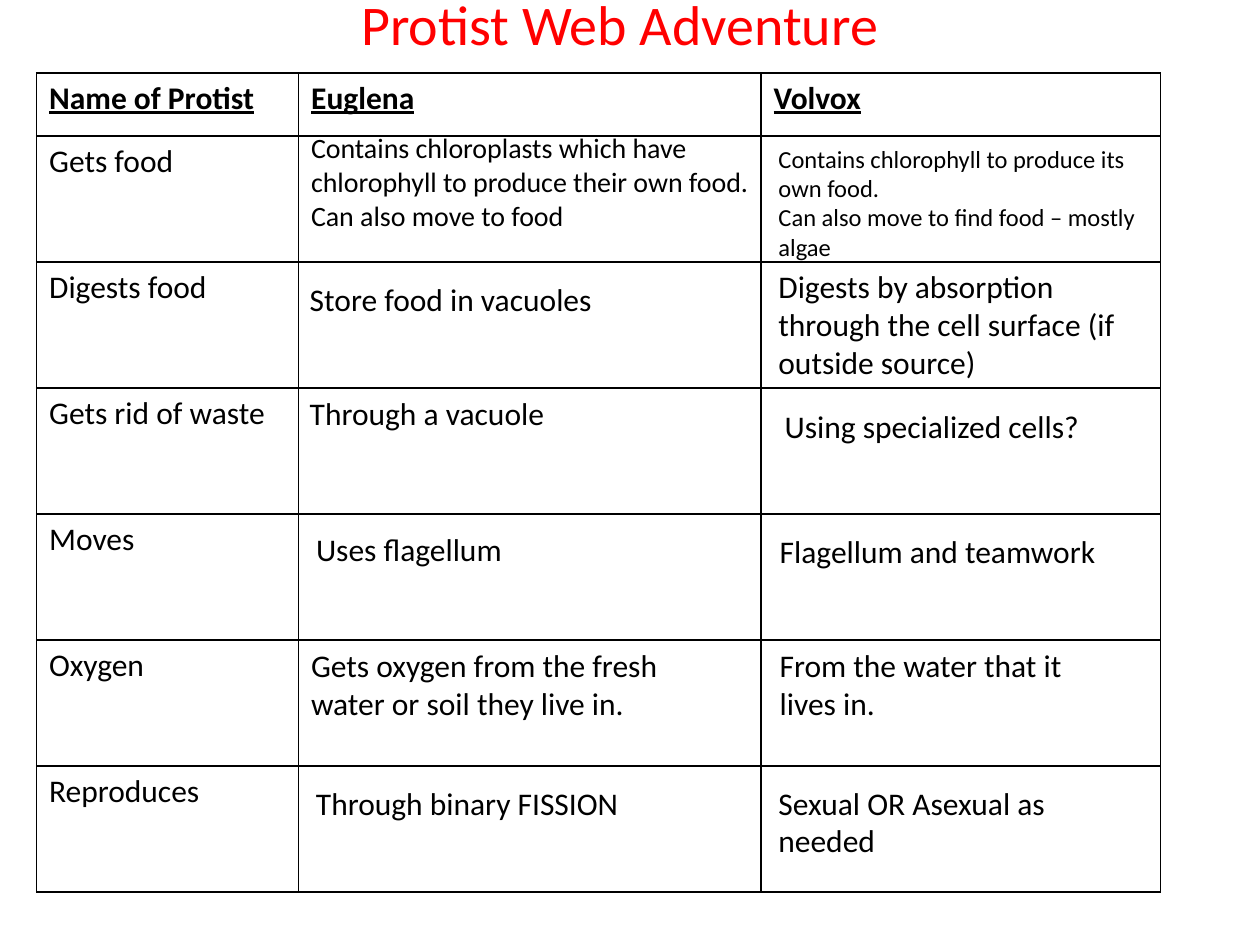
from lxml.etree import SubElement
from pptx import Presentation
from pptx.dml.color import RGBColor
from pptx.enum.text import MSO_ANCHOR, MSO_AUTO_SIZE, PP_ALIGN
from pptx.oxml.ns import qn
from pptx.util import Inches, Pt

COLORS = {"title": "FF0000", "text": "000000", "line": "000000", "cell": "FFFFFF"}
FONT = "Calibri"
TITLE = "Protist Web Adventure"
HEADERS = ["Name of Protist", "Euglena", "Volvox"]
TRAITS = ["Gets food", "Digests food", "Gets rid of waste", "Moves", "Oxygen", "Reproduces"]
COL_WIDTHS = [2.08, 3.67, 3.17]
ROW_HEIGHTS = [0.5] + [1] * len(TRAITS)
ANSWERS = [
    (2.37, 0.99, 3.71, 0.91, 16, ["Contains chloroplasts which have chlorophyll to produce their own food.",
                                  "Can also move to food"]),
    (2.36, 2.17, 3.39, 0.4, 18, ["Store food in vacuoles"]),
    (2.36, 3.08, 3.08, 0.4, 18, ["Through a vacuole"]),
    (2.41, 4.16, 2.58, 0.4, 18, ["Uses flagellum"]),
    (2.37, 5.08, 3.38, 0.71, 18, ["Gets oxygen from the fresh water or soil they live in."]),
    (2.41, 6.17, 3.04, 0.4, 18, ["Through binary FISSION"]),
    (6.08, 1.09, 3.08, 1.04, 14, ["Contains chlorophyll to produce its own food.",
                                  "Can also move to find food – mostly algae"]),
    (6.08, 2.07, 3.07, 1.01, 18, ["Digests by absorption through the cell surface (if outside source)"]),
    (6.13, 3.18, 2.77, 0.4, 18, ["Using specialized cells?"]),
    (6.09, 4.17, 2.77, 0.4, 18, ["Flagellum and teamwork"]),
    (6.09, 5.08, 2.77, 0.71, 18, ["From the water that it lives in."]),
    (6.08, 6.17, 2.77, 0.71, 18, ["Sexual OR Asexual as needed"]),
]


def write(tf, lines, size=18, color="text", bold=False, underline=False, align=PP_ALIGN.LEFT):
    tf.word_wrap = True
    for i, line in enumerate(lines):
        p = tf.paragraphs[0] if i == 0 else tf.add_paragraph()
        p.alignment = align
        r = p.add_run()
        r.text = line
        r.font.name = FONT
        r.font.size = Pt(size)
        r.font.bold = bold
        r.font.underline = underline
        r.font.color.rgb = RGBColor.from_string(COLORS[color])


def format_cell(cell):
    tcPr = cell._tc.get_or_add_tcPr()
    for side in ("lnL", "lnR", "lnT", "lnB"):
        ln = SubElement(tcPr, qn(f"a:{side}"), w=str(Pt(1)))
        fill = SubElement(ln, qn("a:solidFill"))
        SubElement(fill, qn("a:srgbClr"), val=COLORS["line"])
    cell.fill.solid()
    cell.fill.fore_color.rgb = RGBColor.from_string(COLORS["cell"])


def add_traits_table(s):
    table = s.shapes.add_table(len(ROW_HEIGHTS), len(COL_WIDTHS), Inches(0.29), Inches(0.58),
                               Inches(sum(COL_WIDTHS)), Inches(sum(ROW_HEIGHTS))).table
    table.first_row = table.horz_banding = False
    for col, width in zip(table.columns, COL_WIDTHS):
        col.width = Inches(width)
    for row, height in zip(table.rows, ROW_HEIGHTS):
        row.height = Inches(height)
    for cell in table.iter_cells():
        format_cell(cell)
    for i, header in enumerate(HEADERS):
        write(table.cell(0, i).text_frame, [header], bold=True, underline=True)
    for i, trait in enumerate(TRAITS, 1):
        write(table.cell(i, 0).text_frame, [trait])


def main():
    prs = Presentation()
    prs.slide_width, prs.slide_height = Inches(10), Inches(7.5)
    s = prs.slides.add_slide(prs.slide_layouts[5])

    title = s.shapes.title
    title.left, title.top = Inches(0.42), Inches(-0.17)
    title.width, title.height = Inches(9), Inches(0.7)
    title.text_frame.vertical_anchor = MSO_ANCHOR.MIDDLE
    write(title.text_frame, [TITLE], size=32, color="title", align=PP_ALIGN.CENTER)

    add_traits_table(s)
    for *box, size, lines in ANSWERS:
        tf = s.shapes.add_textbox(*map(Inches, box)).text_frame
        tf.auto_size = MSO_AUTO_SIZE.SHAPE_TO_FIT_TEXT
        write(tf, lines, size=size)

    prs.save("out.pptx")


if __name__ == "__main__":
    main()
